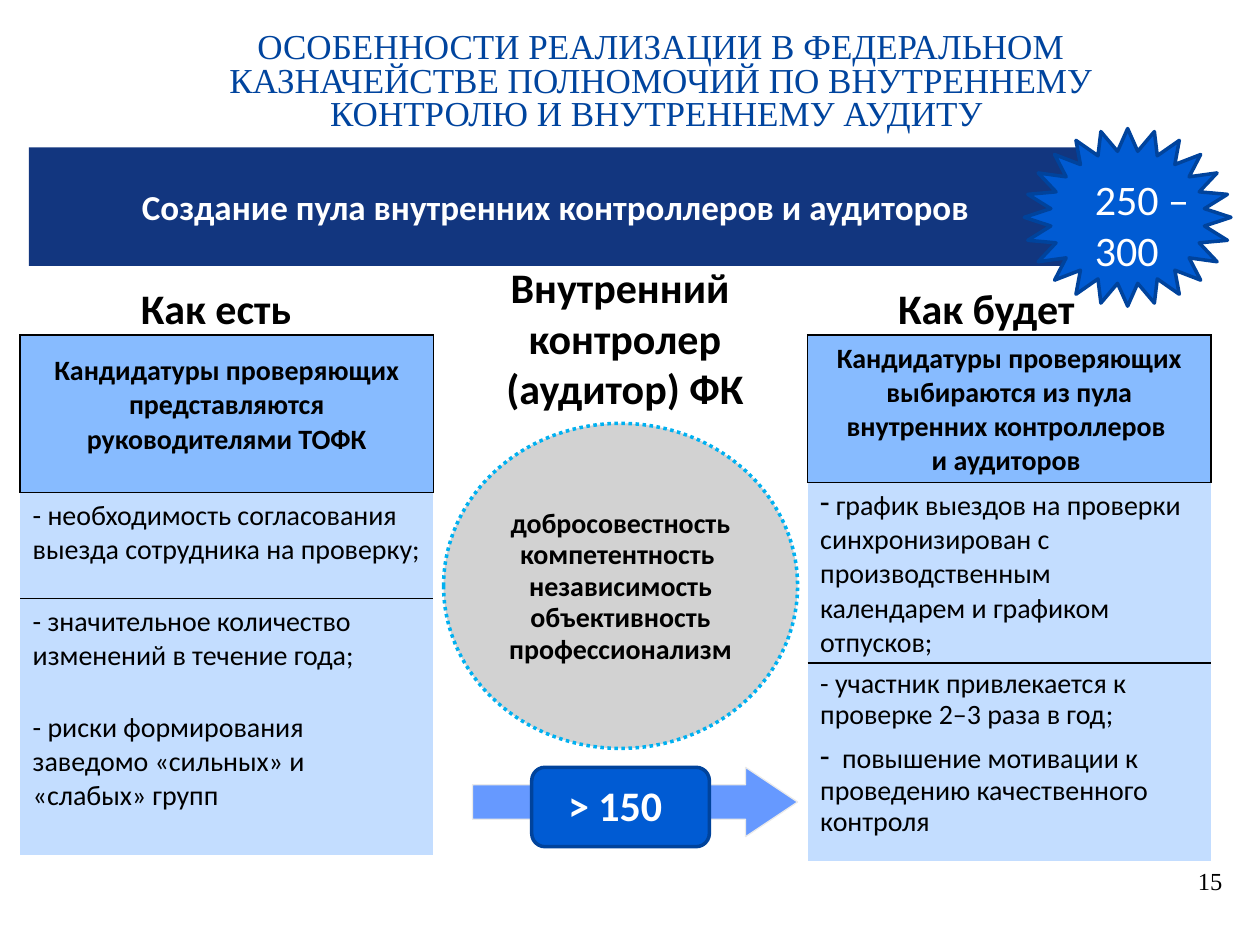
import pptx
import pptx.util
import pptx.dml.color
import pptx.enum.dml
import pptx.enum.shapes
import pptx.enum.text
import pptx.oxml
import pptx.oxml.ns

Inches = pptx.util.Inches
Pt = pptx.util.Pt
SHAPES = pptx.enum.shapes.MSO_SHAPE
ALIGN = pptx.enum.text.PP_ALIGN
ANCHOR = pptx.enum.text.MSO_ANCHOR
NAMESPACE = pptx.oxml.ns.nsdecls("a")

BLACK, WHITE = "000000", "FFFFFF"
BLUE, DARK_BLUE = "005BD3", "00439C"
HEADER_FILL, BODY_FILL = "87BBFF", "C3DDFF"


def color(value):
    """Turn a hex string into a colour."""
    return pptx.dml.color.RGBColor.from_string(value)


def write(frame, lines, size, ink=BLACK, bold=False, align=ALIGN.LEFT,
          font="Calibri", spacing=None, bullet=None):
    """Fill a text frame with one paragraph for each line."""
    for index, line in enumerate(lines):
        para = frame.paragraphs[0] if index == 0 else frame.add_paragraph()
        para.text = line
        para.alignment = align
        if spacing:
            para.line_spacing = spacing
        if bullet:
            properties = para._p.get_or_add_pPr()
            properties.append(pptx.oxml.parse_xml(f'<a:buChar {NAMESPACE} char="{bullet}"/>'))
        para.font.size = Pt(size)
        para.font.name = font
        para.font.bold = bold
        para.font.color.rgb = color(ink)


def add_text(page, box, lines, size, wrap=True, **style):
    """Add a text box at the given place."""
    frame = page.shapes.add_textbox(*map(Inches, box)).text_frame
    frame.word_wrap = wrap
    write(frame, lines, size, **style)


def add_figure(page, kind, box, fill, outline=None, weight=2):
    """Add a preset shape with flat fill and optional outline."""
    figure = page.shapes.add_shape(kind, *map(Inches, box))
    figure.shadow.inherit = False
    figure.fill.solid()
    figure.fill.fore_color.rgb = color(fill)
    if outline:
        figure.line.color.rgb = color(outline)
        figure.line.width = Pt(weight)
    else:
        figure.line.fill.background()
    return figure


def set_borders(cell, sides):
    """Draw the named sides of a cell in black and clear the others."""
    properties = cell._tc.get_or_add_tcPr()
    for index, side in enumerate("LRTB"):
        paint = (f'<a:solidFill><a:srgbClr val="{BLACK}"/></a:solidFill>'
                 if side in sides else "<a:noFill/>")
        properties.insert(index, pptx.oxml.parse_xml(
            f'<a:ln{side} {NAMESPACE} w="12700">{paint}</a:ln{side}>'))


def add_title(page, left, top):
    """Add the slide title."""
    title = ("ОСОБЕННОСТИ РЕАЛИЗАЦИИ В ФЕДЕРАЛЬНОМ КАЗНАЧЕЙСТВЕ ПОЛНОМОЧИЙ "
             "ПО ВНУТРЕННЕМУ КОНТРОЛЮ И ВНУТРЕННЕМУ АУДИТУ ")
    add_text(page, (left, top, 7.89, 0.91), [title], 20, ink="00449E",
             align=ALIGN.CENTER, font="Times New Roman", spacing=0.8)


def add_banner(page, left, top):
    """Add the slightly transparent banner."""
    banner = add_figure(page, SHAPES.RECTANGLE, (left, top, 8.36, 0.94), "002776")
    tint = banner.fill._xPr.find(".//" + pptx.oxml.ns.qn("a:srgbClr"))
    tint.append(pptx.oxml.parse_xml(f'<a:alpha {NAMESPACE} val="93000"/>'))
    banner.text_frame.vertical_anchor = ANCHOR.MIDDLE
    write(banner.text_frame, ["Создание пула внутренних контроллеров и аудиторов"],
          20, ink=WHITE, bold=True, align=ALIGN.CENTER)


def add_column(page, left, top, width, heading, heading_box, header, header_margin, items, heights):
    """Add a heading and a one-column table of header and items."""
    offset, heading_width = heading_box
    table = page.shapes.add_table(len(heights), 1, Inches(left), Inches(top + 0.47),
                                  Inches(width), Inches(sum(heights))).table
    table.first_row = table.horz_banding = False
    for row, height in zip(table.rows, heights):
        row.height = Inches(height)
    borders = ["LRTB", "TB", "T", ""]
    for index, sides in enumerate(borders):
        cell = table.cell(index, 0)
        cell.fill.solid()
        cell.fill.fore_color.rgb = color(BODY_FILL if index else HEADER_FILL)
        set_borders(cell, sides)
        if index:
            line, spacing, bullet = items[index - 1]
            write(cell.text_frame, [line], 16, spacing=spacing, bullet=bullet)
        else:
            cell.margin_top = Inches(header_margin)
            write(cell.text_frame, header, 16, bold=True, align=ALIGN.CENTER)
    add_text(page, (left + offset, top, heading_width, 0.5), [heading], 24,
             wrap=False, bold=True)


def add_center(page, left, top):
    """Add the controller heading, the circle of qualities and the arrow."""
    add_text(page, (left + 0.39, top, 2.1, 1.31),
             ["Внутренний ", "контролер", "(аудитор) ФК"], 24,
             wrap=False, bold=True, align=ALIGN.CENTER)
    circle = add_figure(page, SHAPES.OVAL, (left, top + 1.33, 2.81, 2.58), "D2D2D2", "00B0F0")
    circle.line.dash_style = pptx.enum.dml.MSO_LINE.ROUND_DOT
    circle.text_frame.vertical_anchor = ANCHOR.MIDDLE
    qualities = ["добросовестность", "компетентность ", "независимость",
                 "объективность", "профессионализм "]
    write(circle.text_frame, qualities, 16, bold=True, align=ALIGN.CENTER, spacing=Pt(18))
    arrow = add_figure(page, SHAPES.RIGHT_ARROW, (left + 0.23, top + 4.06, 2.58, 0.55),
                       "6699FF", "EAEAEA", 0.75)
    arrow.adjustments[1] = 0.75
    add_figure(page, SHAPES.ROUNDED_RECTANGLE, (left + 0.7, top + 4.06, 1.41, 0.63),
               BLUE, DARK_BLUE)
    add_text(page, (left + 0.89, top + 4.11, 1.09, 0.5), ["> 150"], 24, ink=WHITE, bold=True)


def add_star(page, left, top):
    """Add the star with the size of the pool."""
    add_figure(page, SHAPES.STAR_24_POINT, (left, top, 1.64, 1.41), BLUE, DARK_BLUE)
    add_text(page, (left + 0.46, top + 0.31, 1.09, 0.91), ["250 –", "300"], 24, ink=WHITE)


def main():
    """Build and save the deck."""
    deck = pptx.Presentation()
    deck.slide_width, deck.slide_height = Inches(10), Inches(7.5)
    page = deck.slides.add_slide(deck.slide_layouts[6])
    add_banner(page, 0.23, 1.17)
    add_column(
        page, 0.16, 2.19, 3.28, "Как есть", (0.86, 1.41),
        ["Кандидатуры проверяющих", "представляются руководителями ТОФК"], 0.15,
        [("- необходимость согласования выезда сотрудника на проверку;", None, None),
         ("- значительное количество изменений в течение года;", None, None),
         ("- риски формирования заведомо «сильных» и «слабых» групп", None, None)],
        [1.25, 0.84, 0.84, 1.2])
    add_column(
        page, 6.41, 2.19, 3.2, "Как будет", (0.62, 1.62),
        ["Кандидатуры проверяющих", "выбираются из пула внутренних контроллеров ",
         "и аудиторов "], 0.05,
        [(" график выездов на проверки \vсинхронизирован с производственным "
          "календарем и графиком отпусков;", None, "-"),
         ("- участник привлекается к проверке 2–3 раза в год;", Pt(18), None),
         ("  повышение мотивации к проведению качественного контроля", Pt(18), "-")],
        [1.17, 1.42, 0.6, 0.97])
    add_center(page, 3.52, 2.03)
    add_title(page, 1.3, 0.21)
    add_text(page, (9.33, 6.82, 0.47, 0.52), ["15"], 14, align=ALIGN.RIGHT,
             font="Times New Roman")
    add_star(page, 8.13, 1.02)
    deck.save("out.pptx")


if __name__ == "__main__":
    main()
